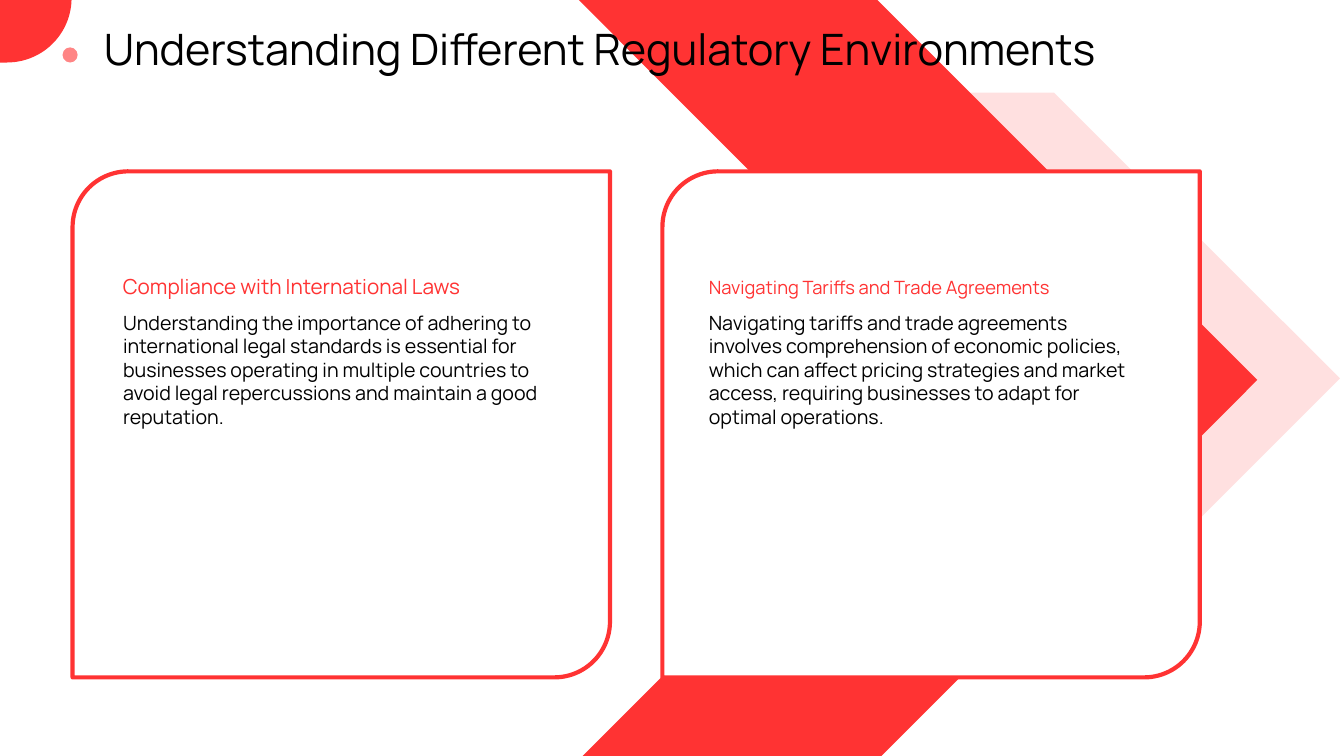
import math

import pptx
import pptx.dml.color
import pptx.enum.shapes
import pptx.enum.text
import pptx.oxml.ns
import pptx.util
from lxml import etree

PX = 9144  # EMU per px, 100 px to the inch
FONT = "Manrope"
RED, PINK, WHITE, BLACK = "FF3333", "FF8585", "FFFFFF", "000000"
SHAPE = pptx.enum.shapes.MSO_SHAPE
ANCHOR = pptx.enum.text.MSO_ANCHOR


def emu(*lengths):
    return [round(length * PX) for length in lengths]


def paint(color_format, hex_color):
    color_format.rgb = pptx.dml.color.RGBColor.from_string(hex_color)


def style(shape, fill, line=None, opacity=None):
    shape.shadow.inherit = False
    shape.fill.solid()
    paint(shape.fill.fore_color, fill)
    if opacity is not None:
        color = shape.fill._xPr.find(".//" + pptx.oxml.ns.qn("a:srgbClr"))
        alpha = etree.SubElement(color, pptx.oxml.ns.qn("a:alpha"))
        alpha.set("val", str(opacity * 1000))
    if line:
        paint(shape.line.color, line)
        shape.line.width = pptx.util.Pt(3)
    else:
        shape.line.fill.background()


def add_preset(slide, preset, box, fill, adjustments=(), **look):
    shape = slide.shapes.add_shape(preset, *emu(*box))
    for index, value in enumerate(adjustments):
        shape.adjustments[index] = value
    style(shape, fill, **look)


def add_card(slide, left):
    add_preset(slide, SHAPE.ROUND_2_DIAG_RECTANGLE, (left, 170, 533, 502),
               WHITE, (0.11, 0), line=RED)


def add_text(slide, text, box, size, color, anchor=ANCHOR.TOP):
    frame = slide.shapes.add_textbox(*emu(*box)).text_frame
    frame.word_wrap = True
    frame.vertical_anchor = anchor
    frame.margin_left = frame.margin_top = 0
    frame.margin_right = frame.margin_bottom = 0
    paragraph = frame.paragraphs[0]
    paragraph.text = text
    paragraph.font.name = FONT
    paragraph.font.size = pptx.util.Pt(size)
    paint(paragraph.font.color, color)


def add_topic(slide, left, heading, heading_size, body):
    add_text(slide, heading, (left, 243, 404, 53), heading_size, RED, ANCHOR.BOTTOM)
    add_text(slide, body, (left, 308, 428, 225), 14, BLACK)


def add_corner_disc(slide, center_x, center_y, radius):
    """Draw the part of a disc that lies inside the slide's top left corner."""
    first = math.degrees(math.asin(-center_y / radius))
    angles = [first + (90 - first) * step / 30 for step in range(31)]
    arc = [emu(center_x + radius * math.cos(math.radians(angle)),
               center_y + radius * math.sin(math.radians(angle)))
           for angle in angles]
    builder = slide.shapes.build_freeform(0, 0)
    builder.add_line_segments(arc + [emu(0, center_y + radius)], close=True)
    style(builder.convert_to_shape(), RED)


def main():
    presentation = pptx.Presentation()
    presentation.slide_width, presentation.slide_height = emu(1333, 750)
    slide = presentation.slides.add_slide(presentation.slide_layouts[6])

    # Cards with the large chevrons between them
    add_card(slide, 72)
    add_preset(slide, SHAPE.CHEVRON, (750, 92, 579, 567), RED, (0.5,), opacity=15)
    add_preset(slide, SHAPE.CHEVRON, (574, 0, 673, 754), RED, (0.56,))
    add_card(slide, 657)

    # Topics
    add_topic(slide, 122, "Compliance with International Laws", 14.8,
              "Understanding the importance of adhering to international legal "
              "standards is essential for businesses operating in multiple "
              "countries to avoid legal repercussions and maintain a good "
              "reputation.")
    add_topic(slide, 703, "Navigating Tariffs and Trade Agreements", 13.1,
              "Navigating tariffs and trade agreements involves comprehension "
              "of economic policies, which can affect pricing strategies and "
              "market access, requiring businesses to adapt for optimal "
              "operations.")

    # Title and corner ornament
    add_text(slide, "Understanding Different Regulatory Environments",
             (103, 24, 1155, 47), 30.9, BLACK, ANCHOR.MIDDLE)
    add_corner_disc(slide, 7, -2, 64)
    add_preset(slide, SHAPE.OVAL, (62, 47, 15, 15), PINK)

    presentation.save("out.pptx")


if __name__ == "__main__":
    main()
